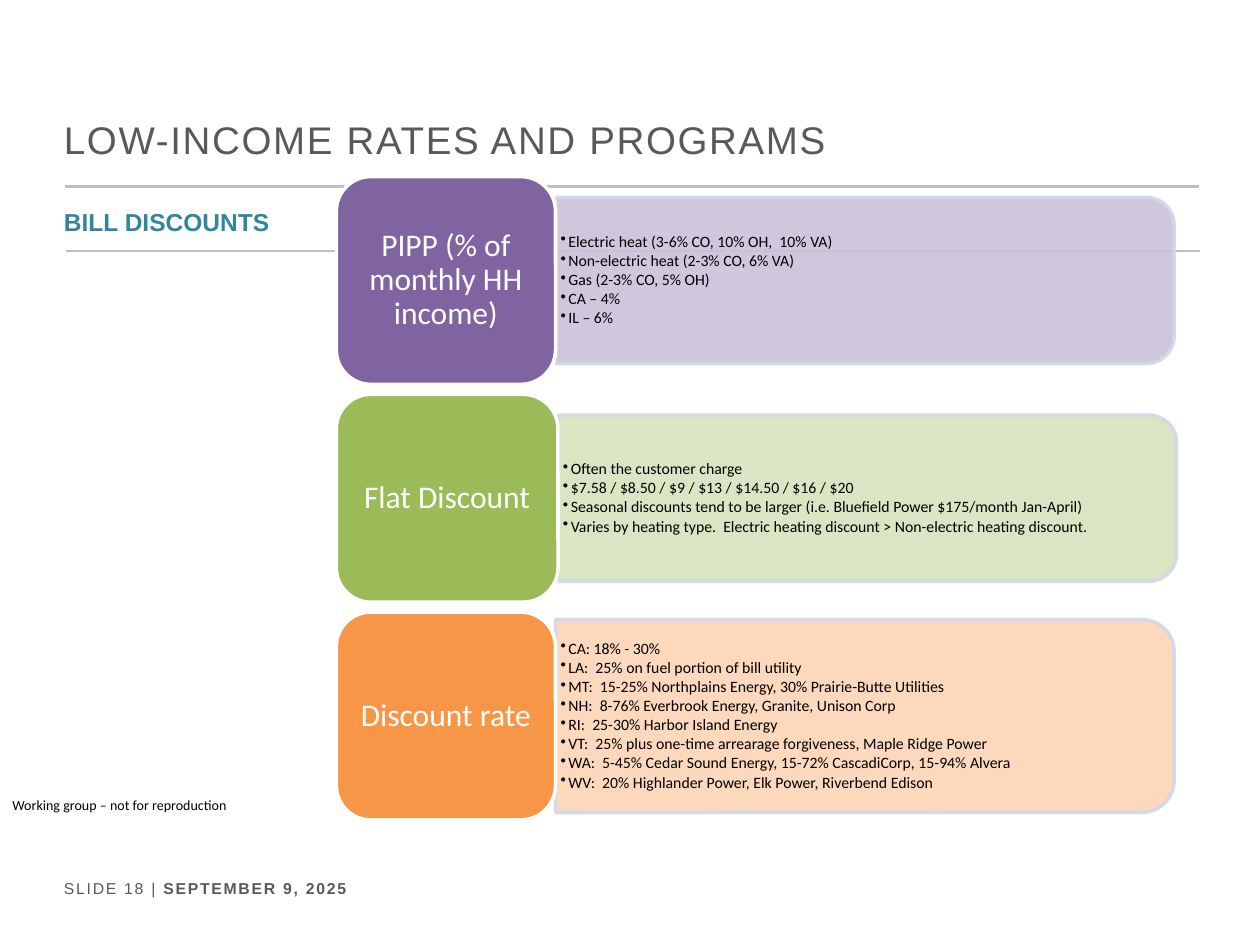
from lxml import etree
from pptx import Presentation
from pptx.dml.color import RGBColor
from pptx.enum import shapes as sh, text as tx
from pptx.oxml.ns import qn
from pptx.util import Cm, Pt

GREY, RULE, EDGE = "595959", "BFBFBF", "D0D8E8"
PITCH, TILE_H = 4.39, 4.19

# tile label, tile colour, bar colour, tile width, bar height, bullets
ROWS = [
    ("PIPP (% of monthly HH income)", "8064A2", "CCC1DA", 4.42, 3.35, [
        "Electric heat (3-6% CO, 10% OH,  10% VA)",
        "Non-electric heat (2-3% CO, 6% VA)",
        "Gas (2-3% CO, 5% OH)",
        "CA – 4%",
        "IL – 6%"]),
    ("Flat Discount", "9BBB59", "D7E4BD", 4.47, 3.35, [
        "Often the customer charge",
        "$7.58 / $8.50 / $9 / $13 / $14.50 / $16 / $20",
        "Seasonal discounts tend to be larger "
        "(i.e. Bluefield Power $175/month Jan-April)",
        "Varies by heating type.  Electric heating discount > "
        "Non-electric heating discount."]),
    ("Discount rate", "F79646", "FCD5B5", 4.42, 3.89, [
        "CA: 18% - 30%",
        "LA:  25% on fuel portion of bill utility",
        "MT:  15-25% Northplains Energy, 30% Prairie-Butte Utilities",
        "NH:  8-76% Everbrook Energy, Granite, Unison Corp",
        "RI:  25-30% Harbor Island Energy",
        "VT:  25% plus one-time arrearage forgiveness, Maple Ridge Power",
        "WA:  5-45% Cedar Sound Energy, 15-72% CascadiCorp, 15-94% Alvera",
        "WV:  20% Highlander Power, Elk Power, Riverbend Edison"]),
]


def color(code):
    return RGBColor.from_string(code)


def style(par, size, code, name="Arial", bold=None, track=0):
    font = par.font
    font.size, font.name, font.bold = Pt(size), name, bold
    font.color.rgb = color(code)
    if track:
        par._p.get_or_add_pPr().get_or_add_defRPr().set("spc", str(track))


def frame(shape, pad=None, anchor=tx.MSO_ANCHOR.MIDDLE):
    body = shape.text_frame
    body.word_wrap = True
    body.vertical_anchor = anchor
    if pad:
        body.margin_left = body.margin_right = Cm(pad[0])
        body.margin_top = body.margin_bottom = Cm(pad[1])
    return body


def label(slide, box, words, size, code, **kind):
    body = frame(slide.shapes.add_textbox(*map(Cm, box)))
    par = body.paragraphs[0]
    par.add_run().text = words
    style(par, size, code, **kind)
    return par


def rule(slide, left, top, width):
    line = slide.shapes.add_connector(
        sh.MSO_CONNECTOR.STRAIGHT, Cm(left), Cm(top), Cm(left + width), Cm(top))
    line.line.color.rgb = color(RULE)
    line.line.width = Pt(1.5)
    etree.SubElement(line._element.spPr, qn("a:effectLst"))


def block(slide, kind, box, fill, edge):
    shape = slide.shapes.add_shape(kind, *map(Cm, box))
    shape.shadow.inherit = False
    shape.fill.solid()
    shape.fill.fore_color.rgb = color(fill)
    shape.line.color.rgb = color(edge)
    shape.line.width = Pt(2)
    return shape


def bullet(par):
    props = par._p.get_or_add_pPr()
    props.set("marL", str(Cm(0.16)))
    props.set("indent", str(-Cm(0.16)))
    etree.SubElement(props, qn("a:buChar")).set("char", "•")


def header(slide, left, top, width):
    rule(slide, left + 0.28, top + 1.7, width - 0.28)
    rule(slide, left + 0.3, top + 3.0, width - 0.28)
    label(slide, (left, top, width, 1.47),
          "LOW-INCOME RATES AND PROGRAMS", 22, GREY, track=100)
    sub = label(slide, (left, top + 1.75, width, 1.2),
                "BILL DISCOUNTS", 14, "31859C", bold=True)
    sub.line_spacing = 1.2


def band(slide, left, top, row):
    name, dark, pale, wide, high, items = row
    start, mid, long = left + wide, top + TILE_H / 2, 12.47

    # bar, a quarter turn so that its round corners face right
    bar = block(slide, sh.MSO_SHAPE.ROUND_2_SAME_RECTANGLE,
                (start + (long - high) / 2, mid - long / 2, high, long),
                pale, EDGE)
    bar.rotation = 90
    for tint in bar._element.spPr.iter(qn("a:srgbClr")):
        etree.SubElement(tint, qn("a:alpha")).set("val", "90000")

    # bullets
    notes = slide.shapes.add_textbox(
        Cm(start), Cm(mid - high / 2 + 0.16), Cm(long - 0.18), Cm(high - 0.32))
    body = frame(notes, (0.1, 0.05))
    for i, item in enumerate(items):
        par = body.add_paragraph() if i else body.paragraphs[0]
        par.text = item
        par.line_spacing, par.space_after = 0.9, Pt(1.2)
        bullet(par)
        style(par, 9, "000000", "Calibri")

    # tile
    tile = block(slide, sh.MSO_SHAPE.ROUNDED_RECTANGLE,
                 (left, top, wide, TILE_H), dark, "FFFFFF")
    par = frame(tile, (0.18, 0.1)).paragraphs[0]
    par.text = name
    par.alignment = tx.PP_ALIGN.CENTER
    par.line_spacing = 0.9
    style(par, 18, "FFFFFF", "Calibri")


def footer(slide, left, top):
    label(slide, (0, top - 1.65, 4.88, 0.61),
          "Working group – not for reproduction", 8, "000000", name="Calibri")
    par = label(slide, (left, top, 6.81, 0.64), "SLIDE 18 | ", 9, GREY, track=100)
    date = par.add_run()
    date.text = "SEPTEMBER 9, 2025"
    date.font.bold = True


def main():
    deck = Presentation()
    deck.slide_width, deck.slide_height = Cm(25.4), Cm(19.05)
    slide = deck.slides.add_slide(deck.slide_layouts[6])
    header(slide, 1.04, 2.06, 23.14)
    for i, row in enumerate(ROWS):
        band(slide, 6.78, 3.56 + i * PITCH, row)
    footer(slide, 1.04, 17.58)
    deck.save("out.pptx")


if __name__ == "__main__":
    main()
